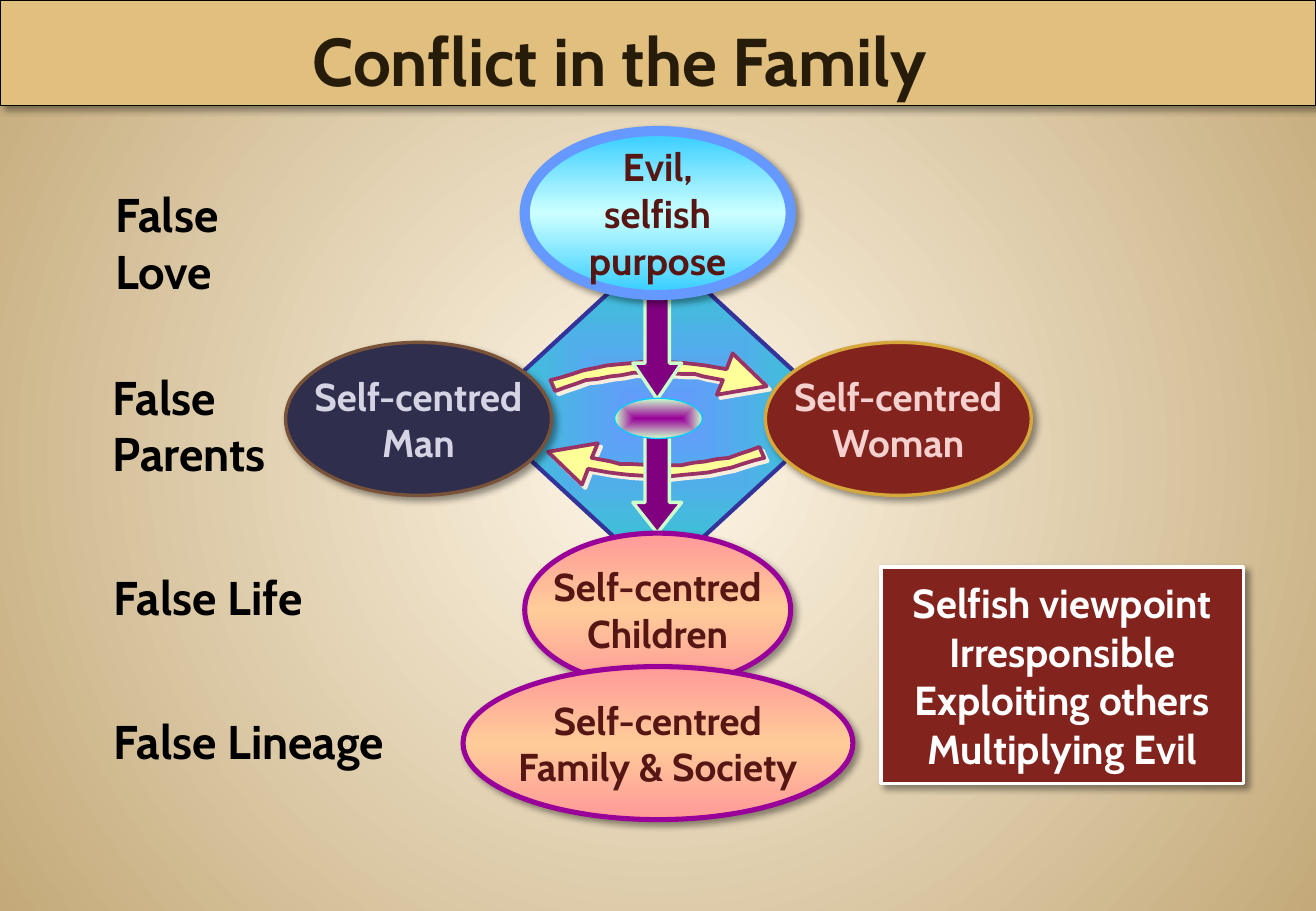
import pptx
import pptx.dml.color
import pptx.enum.shapes
import pptx.enum.text
import pptx.oxml
import pptx.oxml.ns
import pptx.util

Cm = pptx.util.Cm
Pt = pptx.util.Pt
Shape = pptx.enum.shapes.MSO_SHAPE
Align = pptx.enum.text.PP_ALIGN
Anchor = pptx.enum.text.MSO_ANCHOR
color = pptx.dml.color.RGBColor.from_string
DRAWING = pptx.oxml.ns.nsdecls("a")
SOFT_SHADOW = ("000000", 40, 4, 3)
CREAM_SHADOW = ("F7EEDD", 100, 0, 2.8)


def paint(target, fill, path=None, line=None, width=1, shadow=None):
    """Fill with one colour or a list of gradient colours, then outline and shadow.

    path names a radial gradient; without it the gradient runs downwards.
    shadow is (colour, opacity in percent, blur in points, distance in points).
    """
    if isinstance(fill, str):
        target.fill.solid()
        target.fill.fore_color.rgb = color(fill)
    else:
        target.fill.gradient()
        gradient = target.element.find(".//" + pptx.oxml.ns.qn("a:gradFill"))
        for child in list(gradient):
            gradient.remove(child)
        stops = "".join(
            f'<a:gs pos="{100000 * i // (len(fill) - 1)}"><a:srgbClr val="{value}"/></a:gs>'
            for i, value in enumerate(fill))
        gradient.append(pptx.oxml.parse_xml(f"<a:gsLst {DRAWING}>{stops}</a:gsLst>"))
        direction = (
            f'<a:path {DRAWING} path="{path}"><a:fillToRect l="50000" t="50000" r="50000" b="50000"/></a:path>'
            if path else f'<a:lin {DRAWING} ang="5400000" scaled="0"/>')
        gradient.append(pptx.oxml.parse_xml(direction))
    if line:
        target.line.color.rgb = color(line)
        target.line.width = Pt(width)
        target.shadow.inherit = False
    if shadow:
        value, opacity, blur, distance = shadow
        effects = target.element.find(".//" + pptx.oxml.ns.qn("a:effectLst"))
        effects.append(pptx.oxml.parse_xml(
            f'<a:outerShdw {DRAWING} blurRad="{Pt(blur)}" dist="{Pt(distance)}" dir="2700000" '
            f'algn="ctr" rotWithShape="0"><a:srgbClr val="{value}">'
            f'<a:alpha val="{opacity * 1000}"/></a:srgbClr></a:outerShdw>'))


def write(shape, text, size=23, ink="000000", align=Align.CENTER, anchor=Anchor.MIDDLE, wrap=False):
    frame = shape.text_frame
    frame.word_wrap = wrap
    frame.vertical_anchor = anchor
    frame.text = text
    for paragraph in frame.paragraphs:
        paragraph.alignment = align
        paragraph.font.name = "Cabin"
        paragraph.font.size = Pt(size)
        paragraph.font.bold = True
        paragraph.font.color.rgb = color(ink)


presentation = pptx.Presentation()
presentation.slide_width = Cm(27.51)
presentation.slide_height = Cm(19.05)
slide = presentation.slides.add_slide(presentation.slide_layouts[6])
shapes = slide.shapes
paint(slide.background, ["FFF7E8", "C4AA7A"], path="circle")

diamond = shapes.add_shape(Shape.DIAMOND, Cm(10.01), Cm(5.16), Cm(7.52), Cm(6.93))
paint(diamond, ["6699FF", "33CCCC"], path="shape", line="333399", width=2.5)

# Family members, from back to front
PEACH = ["FF9999", "FFCC99", "FF9999"]
SKY = ["33CCFF", "CCFFFF", "33CCFF"]
members = [
    ("Self-centred\nMan", 5.97, 7.16, 5.56, 3.2, "2F2E4D", "795339", 2, "D4D4E5"),
    ("Self-centred\nWoman", 16, 7.16, 5.56, 3.2, "82231D", "D6A73B", 2, "F4D0CE"),
    ("Self-centred\nChildren", 10.97, 11.15, 5.56, 3.2, PEACH, "990099", 3, "561714"),
    ("Self-centred\nFamily & Society", 9.68, 13.94, 8.15, 3.2, PEACH, "990099", 3, "561714"),
    ("Evil,\nselfish\npurpose", 10.97, 2.74, 5.56, 3.43, SKY, "6699FF", 6, "561714"),
]

# Curved arrow from man to woman, in hundredths of an inch
curve = [
    (595, 313), (579, 310), (572, 308), (563, 308), (546, 307), (530, 307), (521, 307),
    (511, 309), (502, 310), (492, 312), (482, 313), (474, 316), (465, 319), (457, 322),
    (453, 313), (461, 311), (471, 308), (480, 305), (490, 303), (499, 301), (509, 300),
    (520, 299), (529, 298), (538, 297), (547, 298), (564, 299), (573, 300), (581, 301),
    (598, 304), (603, 291), (631, 318), (590, 325),
]
# The return arrow is the same curve turned by half a circle
return_curve = [(1082 - x, 690 - y) for x, y in curve]
for points in (curve, return_curve):
    builder = shapes.build_freeform(*points[0], scale=Cm(2.54) / 100)
    builder.add_line_segments(points[1:], close=True)
    paint(builder.convert_to_shape(), "FFFF99", line="993366", width=2.25, shadow=CREAM_SHADOW)

# Vertical arrows: top, height, head length
for top, height, head in [(8.76, 2.39, 0.63), (5.56, 2.79, 0.74)]:
    arrow = shapes.add_shape(Shape.DOWN_ARROW, Cm(13.23), Cm(top), Cm(1.02), Cm(height))
    arrow.adjustments[0] = 0.5
    arrow.adjustments[1] = head
    paint(arrow, "800080", line="CCFFCC", width=2)

for text, left, top, width, height, fill, line, line_width, ink in members:
    member = shapes.add_shape(Shape.OVAL, Cm(left), Cm(top), Cm(width), Cm(height))
    paint(member, fill, line=line, width=line_width, shadow=SOFT_SHADOW)
    write(member, text, ink=ink)

labels = [
    ("False\nLove", 2.16, 3.76, 6.5, 2.62),
    ("False\nParents", 2.11, 7.57, 4.78, 2.62),
    ("False Life", 2.13, 11.76, 8.89, 1.45),
    ("False Lineage", 2.13, 14.76, 8.89, 1.45),
]
for text, left, top, width, height in labels:
    label = shapes.add_textbox(Cm(left), Cm(top), Cm(width), Cm(height))
    write(label, text, size=28, align=Align.LEFT, anchor=Anchor.TOP, wrap=True)

hub = shapes.add_shape(Shape.OVAL, Cm(12.85), Cm(8.33), Cm(1.83), Cm(0.84))
paint(hub, ["990099", "CCFFCC"], path="shape", line="00CCFF", width=0.75)

results = shapes.add_shape(Shape.ROUNDED_RECTANGLE, Cm(18.42), Cm(11.86), Cm(7.57), Cm(4.52))
results.adjustments[0] = 0
paint(results, "82231D", line="FFFFFF", width=2, shadow=SOFT_SHADOW)
write(results, "Selfish viewpoint\nIrresponsible\nExploiting others\nMultiplying Evil", size=24, ink="FFFFFF")

title = shapes.add_shape(Shape.RECTANGLE, Cm(0), Cm(0), Cm(27.51), Cm(2.21))
paint(title, "E1BF7E", line="000000", width=0.75, shadow=SOFT_SHADOW)
write(title, "Conflict in the Family", size=40, ink="261C09", anchor=Anchor.BOTTOM, wrap=True)
title.text_frame.margin_right = Cm(1.85)

presentation.save("out.pptx")
